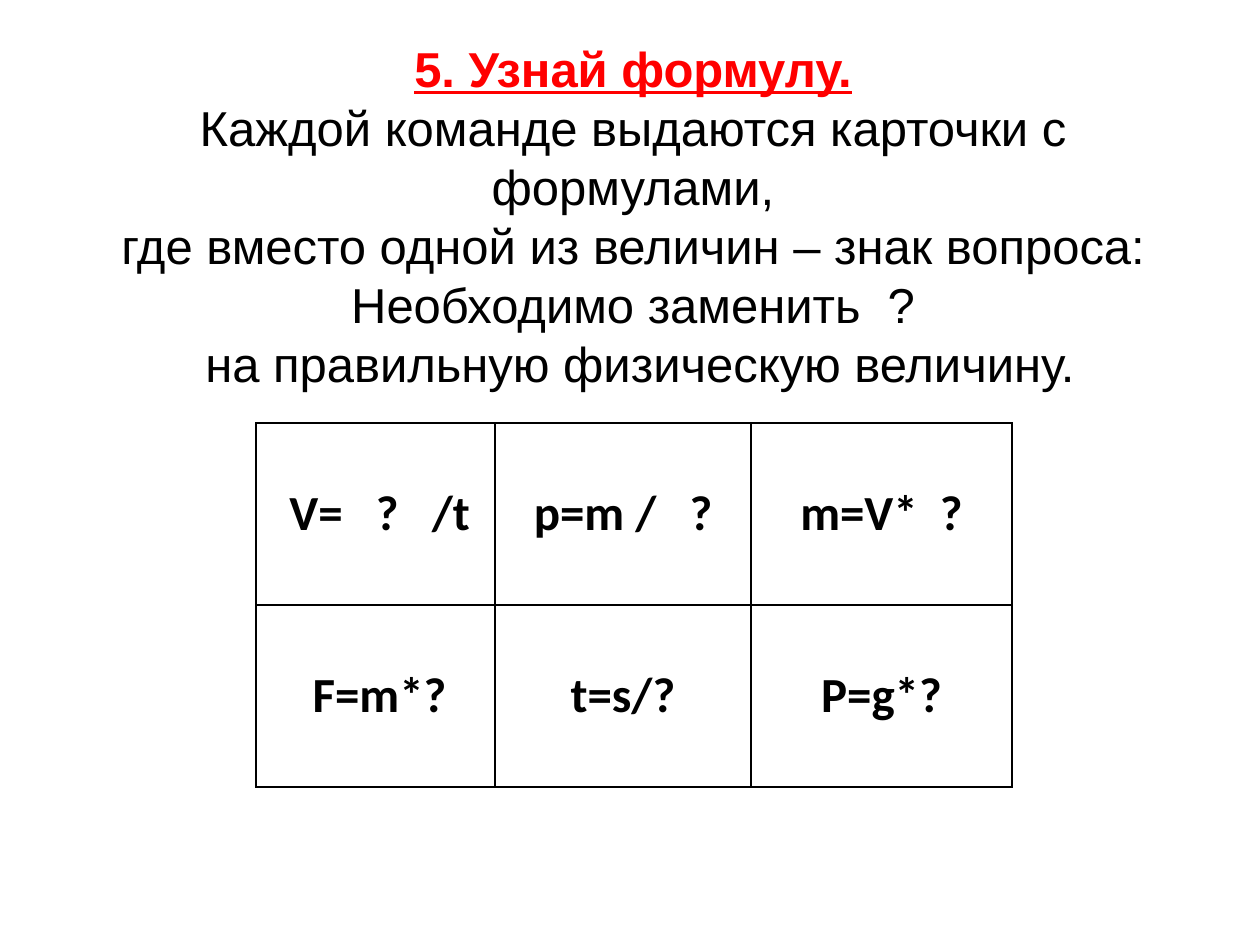
from lxml import etree
from pptx import Presentation
from pptx.dml.color import RGBColor
from pptx.enum.text import MSO_ANCHOR as Anchor, PP_ALIGN as Align
from pptx.oxml.ns import qn
from pptx.util import Pt

PX = 914400 // 126
BLACK = RGBColor(0, 0, 0)
RED = RGBColor(255, 0, 0)
TEXT_SIZE = 28
BORDER_WIDTH = 0.96

HEADING = "5. Узнай формулу."
TASK = [
    "Каждой команде выдаются карточки с формулами,",
    "где вместо одной из величин – знак вопроса:",
    "Необходимо заменить  ?",
    " на правильную физическую величину.",
]
FORMULAS = [
    ["V=   ?   /t", "p=m /   ?", "m=V*  ?"],
    ["F=m*?", "t=s/?", "P=g*?"],
]
COLUMN_WIDTHS = [239, 256, 261]
ROW_HEIGHT = 182


def px(length):
    return length * PX


def style_paragraph(paragraph, font_name, color, bold=False, underline=False):
    paragraph.alignment = Align.CENTER
    font = paragraph.font
    font.name, font.size, font.bold = font_name, Pt(TEXT_SIZE), bold
    font.underline = underline
    font.color.rgb = color


def add_task(slide, left, top, width, height):
    box = slide.shapes.add_textbox(px(left), px(top), px(width), px(height))
    frame = box.text_frame
    frame.word_wrap = True
    frame.margin_left = frame.margin_right = 0
    frame.margin_top = frame.margin_bottom = 0
    frame.text = "\n".join([HEADING] + TASK)
    for index, paragraph in enumerate(frame.paragraphs):
        is_heading = index == 0
        style_paragraph(paragraph, "Arial", RED if is_heading else BLACK,
                        bold=is_heading, underline=is_heading)
        paragraph.line_spacing = Pt(33.7)


def add_borders(cell):
    properties = cell._tc.get_or_add_tcPr()
    for position, side in enumerate(("lnL", "lnR", "lnT", "lnB")):
        line = etree.Element(qn(f"a:{side}"), w=str(Pt(BORDER_WIDTH)))
        fill = etree.SubElement(line, qn("a:solidFill"))
        etree.SubElement(fill, qn("a:srgbClr"), val=str(BLACK))
        properties.insert(position, line)


def add_formula_table(slide, left, top):
    rows, columns = len(FORMULAS), len(COLUMN_WIDTHS)
    table = slide.shapes.add_table(
        rows, columns, px(left), px(top),
        px(sum(COLUMN_WIDTHS)), px(ROW_HEIGHT * rows)).table
    table.first_row = table.horz_banding = False
    for column, width in zip(table.columns, COLUMN_WIDTHS):
        column.width = px(width)
    for row, formulas in zip(table.rows, FORMULAS):
        row.height = px(ROW_HEIGHT)
        for index, (cell, formula) in enumerate(zip(row.cells, formulas)):
            cell.text = formula
            cell.vertical_anchor = Anchor.MIDDLE
            cell.margin_left = px(17 if index == 0 else 9)
            cell.margin_right = px(9)
            cell.fill.background()
            style_paragraph(cell.text_frame.paragraphs[0], "Calibri", BLACK,
                            bold=True)
            add_borders(cell)


def main():
    deck = Presentation()
    deck.slide_width, deck.slide_height = px(1260), px(945)
    slide = deck.slides.add_slide(deck.slide_layouts[6])
    add_formula_table(slide, 256, 423)
    add_task(slide, 68, 38, 1130, 354)
    deck.save("out.pptx")


if __name__ == "__main__":
    main()
